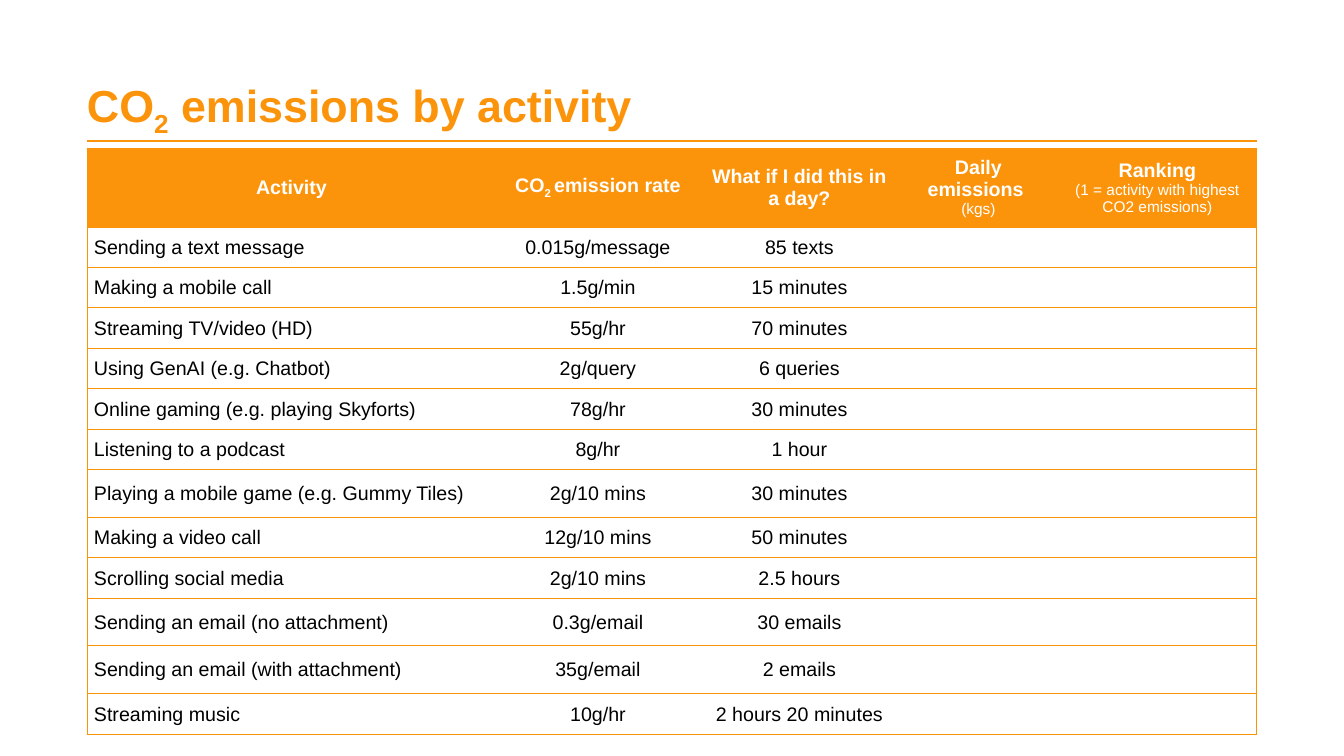
from itertools import pairwise

from lxml import etree
from pptx import Presentation
from pptx.dml.color import RGBColor
from pptx.enum.shapes import MSO_CONNECTOR
from pptx.enum.text import MSO_ANCHOR as Anchor, PP_ALIGN as Align
from pptx.oxml import parse_xml
from pptx.oxml.ns import nsdecls, qn
from pptx.util import Emu, Pt

PX = 12192000 / 1344
ORANGE, WHITE, BLACK = "FC940B", "FFFFFF", "000000"
BORDER = "FC9205"

HEADERS = [
    [([("Activity", 0)], 14)],
    [([("CO", 0), ("2 ", -25), ("emission rate", 0)], 14)],
    [([("What if I did this in a day?", 0)], 14)],
    [([("Daily emissions ", 0)], 14), ([("(kgs)", 0)], 11)],
    [([("Ranking", 0)], 14),
     ([("(1 = activity with highest CO2 emissions)", 0)], 11)],
]
ACTIVITIES = [
    ("Sending a text message", "0.015g/message", "85 texts"),
    ("Making a mobile call", "1.5g/min", "15 minutes"),
    ("Streaming TV/video (HD)", "55g/hr", "70 minutes"),
    ("Using GenAI (e.g. Chatbot)", "2g/query", "6 queries"),
    ("Online gaming (e.g. playing Skyforts)", "78g/hr", "30 minutes"),
    ("Listening to a podcast", "8g/hr", "1 hour"),
    ("Playing a mobile game (e.g. Gummy Tiles)", "2g/10 mins", "30 minutes"),
    ("Making a video call", "12g/10 mins", "50 minutes"),
    ("Scrolling social media", "2g/10 mins", "2.5 hours"),
    ("Sending an email (no attachment)", "0.3g/email", "30 emails"),
    ("Sending an email (with attachment)", "35g/email", "2 emails"),
    ("Streaming music", "10g/hr", "2 hours 20 minutes"),
]
COLUMN_WIDTHS = [409, 204, 199, 159, 199]
ROW_EDGES = [148, 227, 268, 308, 349, 389, 430, 470,
             518, 558, 599, 646, 694, 735]


def px(*lengths):
    return [Emu(round(length * PX)) for length in lengths]


def write(paragraph, runs, size, color, bold=False, align=Align.LEFT):
    """Fill a paragraph with (text, baseline percent) runs in one style."""
    paragraph.alignment = align
    font = paragraph.font
    font.name, font.size, font.bold = "Arial", Pt(size), bold
    font.color.rgb = RGBColor.from_string(color)
    for text, baseline in runs:
        run = paragraph.add_run()
        run.text = text
        if baseline:
            run.font._element.set("baseline", str(baseline * 1000))


presentation = Presentation()
presentation.slide_width, presentation.slide_height = px(1344, 756)
slide = presentation.slides.add_slide(presentation.slide_layouts[6])

# Title and rule
rule = slide.shapes.add_connector(MSO_CONNECTOR.STRAIGHT, *px(87, 141, 1257, 141))
rule.line.color.rgb = RGBColor.from_string(ORANGE)
rule.line.width = Pt(1.5)
etree.SubElement(rule._element.spPr, qn("a:effectLst"))

title = slide.shapes.add_textbox(*px(87, 79, 1170, 58)).text_frame
title.word_wrap = True
title.vertical_anchor = Anchor.MIDDLE
title.margin_left = title.margin_right = title.margin_top = title.margin_bottom = 0
write(title.paragraphs[0], [("CO", 0), ("2", -25), (" emissions by activity", 0)],
      32, ORANGE, bold=True)

# Table
table = slide.shapes.add_table(
    len(ACTIVITIES) + 1, len(COLUMN_WIDTHS),
    *px(87, ROW_EDGES[0], sum(COLUMN_WIDTHS), ROW_EDGES[-1] - ROW_EDGES[0])).table
table.horz_banding = False
for column, width in zip(table.columns, px(*COLUMN_WIDTHS)):
    column.width = width
for row, (top, bottom) in zip(table.rows, pairwise(ROW_EDGES)):
    row.height = px(bottom - top)[0]

last_column = len(COLUMN_WIDTHS) - 1
for row_index, row in enumerate(table.rows):
    for column_index, cell in enumerate(row.cells):
        cell.vertical_anchor = Anchor.MIDDLE
        cell.fill.solid()
        cell.fill.fore_color.rgb = RGBColor.from_string(WHITE if row_index else ORANGE)

        borders = {"lnL": column_index == 0, "lnR": column_index == last_column,
                   "lnT": True, "lnB": True}
        for position, (side, visible) in enumerate(borders.items()):
            paint = (f'<a:solidFill><a:srgbClr val="{BORDER}"/></a:solidFill>'
                     if visible else "<a:noFill/>")
            cell._tc.get_or_add_tcPr().insert(position, parse_xml(
                f'<a:{side} {nsdecls("a")} w="9525">{paint}</a:{side}>'))

        frame = cell.text_frame
        if row_index == 0:
            for number, (runs, size) in enumerate(HEADERS[column_index]):
                paragraph = frame.add_paragraph() if number else frame.paragraphs[0]
                write(paragraph, runs, size, WHITE, size == 14, Align.CENTER)
            continue
        cell.margin_left, cell.margin_right = px(7, 7)
        cell.margin_top = cell.margin_bottom = 0
        values = ACTIVITIES[row_index - 1]
        runs = [(values[column_index], 0)] if column_index < len(values) else []
        write(frame.paragraphs[0], runs, 14, BLACK,
              align=Align.CENTER if column_index else Align.LEFT)

presentation.save("out.pptx")
